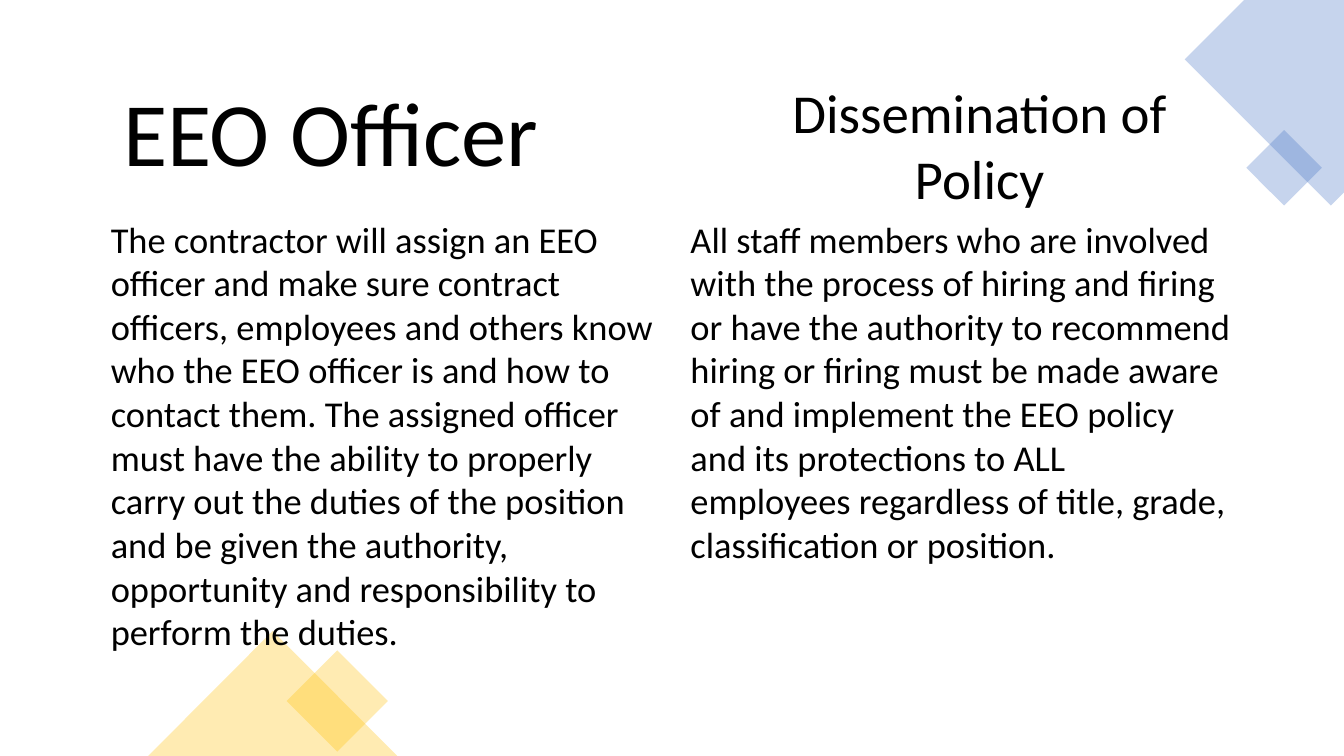
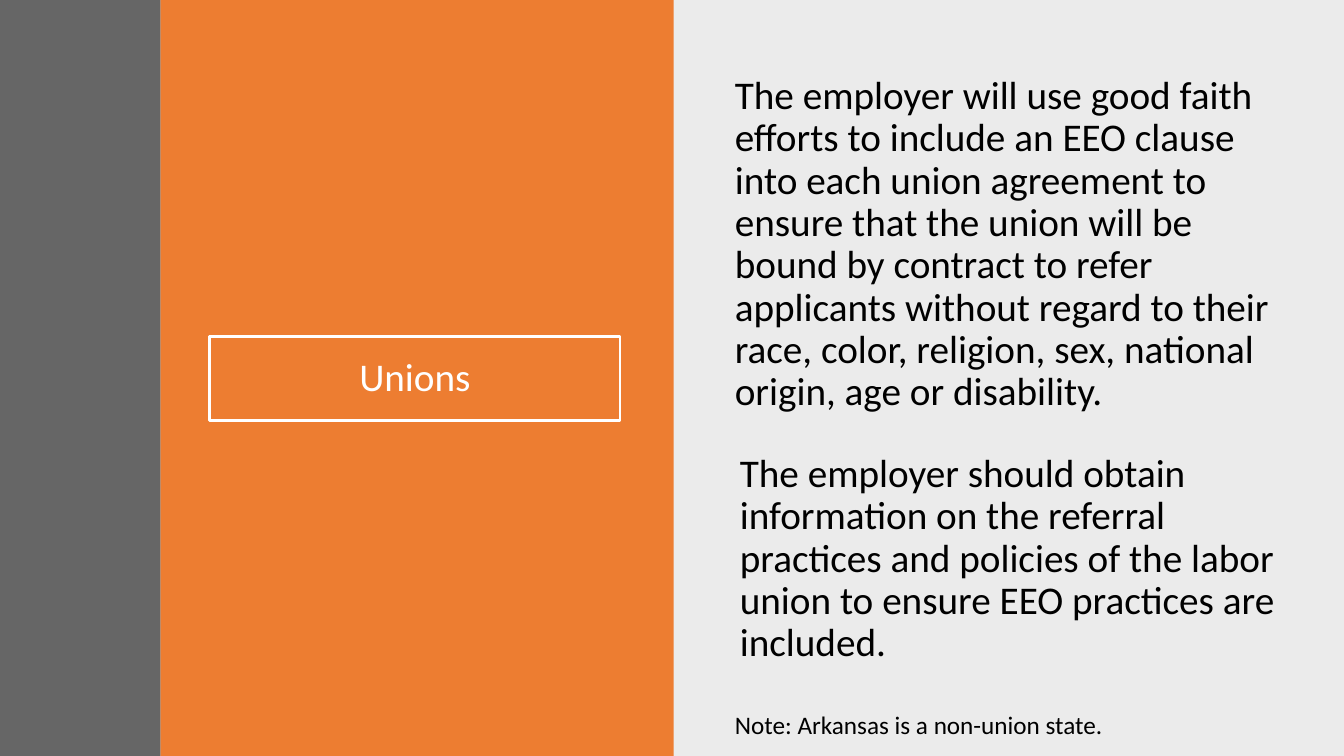
from pptx import Presentation
from pptx.dml.color import RGBColor
from pptx.enum import shapes, text
from pptx.oxml.ns import qn
from pptx.util import Inches, Pt
from lxml import etree

COLORS = {"black": "000000", "white": "FFFFFF", "blue": "4472C4",
          "gold": "FFC000", "orange": "ED7D31", "grey": "404040"}
FONT = "Calibri"
RECT = shapes.MSO_SHAPE.RECTANGLE
TRIANGLE = shapes.MSO_SHAPE.ISOSCELES_TRIANGLE
LEFT, CENTER = text.PP_ALIGN.LEFT, text.PP_ALIGN.CENTER


def paint(sp, color, opacity=100, rotation=0):
    """Give a shape a flat, borderless fill; opacity is in percent."""
    sp.shadow.inherit = False
    sp.rotation = rotation
    sp.line.fill.background()
    sp.fill.solid()
    sp.fill.fore_color.rgb = RGBColor.from_string(COLORS[color])
    if opacity < 100:
        clr = sp.element.spPr.find(qn("a:solidFill"))[0]
        etree.SubElement(clr, qn("a:alpha"), val=str(opacity * 1000))


def write(sp, box, words, size, color="black", anchor=text.MSO_ANCHOR.TOP, **paragraph):
    """Place a text box or title and fill it with one formatted paragraph."""
    sp.left, sp.top, sp.width, sp.height = (Inches(v) for v in box)
    tf = sp.text_frame
    tf.word_wrap = True
    tf.auto_size = text.MSO_AUTO_SIZE.NONE
    tf.vertical_anchor = anchor
    p = tf.paragraphs[0]
    for name, value in paragraph.items():
        setattr(p, name, value)
    r = p.add_run()
    r.text = words
    r.font.name = FONT
    r.font.size = Pt(size)
    r.font.color.rgb = RGBColor.from_string(COLORS[color])


prs = Presentation()
prs.slide_width, prs.slide_height = Inches(13.33), Inches(7.5)
title_only = prs.slide_layouts[5]

# Slide 1: EEO officer and dissemination of policy
s = prs.slides.add_slide(title_only)
outline = [(12.34, 0), (11.75, 0.59), (13.2, 2.04), (13.33, 1.91), (13.33, 0)]
points = [(Inches(x), Inches(y)) for x, y in outline]
builder = s.shapes.build_freeform(*points[0])
builder.add_line_segments(points[1:], close=True)
paint(builder.convert_to_shape(), "blue", 30)

for kind, box, color, rotation in [
    (RECT, (12.47, 1.4, 0.53, 0.53), "blue", 45),
    (RECT, (2.99, 6.6, 0.71, 0.71), "gold", 45),
    (TRIANGLE, (1.47, 6.26, 2.47, 1.24), "gold", 0),
]:
    sp = s.shapes.add_shape(kind, *(Inches(v) for v in box))
    paint(sp, color, 30, rotation)

columns = [
    "The contractor will assign an EEO officer and make sure contract officers, "
    "employees and others know who the EEO officer is and how to contact them. "
    "The assigned officer must have the ability to properly carry out the duties "
    "of the position and be given the authority, opportunity and responsibility "
    "to perform the duties.",
    "All staff members who are involved with the process of hiring and firing or "
    "have the authority to recommend hiring or firing must be made aware of and "
    "implement the EEO policy and its protections to ALL employees regardless of "
    "title, grade, classification or position.",
]
for i, words in enumerate(columns):
    write(s.shapes.add_textbox(0, 0, 0, 0), (1 + 5.75 * i, 2.1, 5.59, 4.69),
          words, 26, space_after=Pt(6))

write(s.shapes.title, (1.12, 0.7, 4.99, 1.2), "EEO Officer", 64.7,
      alignment=LEFT, space_after=Pt(6))
write(s.shapes.add_textbox(0, 0, 0, 0), (7.22, 0.73, 4.99, 1.43),
      "Dissemination of Policy", 39.2, alignment=CENTER, space_after=Pt(6))

# Slide 2: unions
s = prs.slides.add_slide(title_only)
for left, width, color, opacity in [
    (6.67, 6.66, "black", 8),
    (1.59, 5.09, "orange", 100),
    (0, 1.59, "grey", 80),
]:
    sp = s.shapes.add_shape(RECT, Inches(left), 0, Inches(width), prs.slide_height)
    paint(sp, color, opacity)

title = s.shapes.title
s.shapes.element.append(title.element)  # bring the title in front of the bands
write(title, (2.08, 3.34, 4.07, 0.83), "Unions", 28, "white",
      text.MSO_ANCHOR.MIDDLE, alignment=CENTER, line_spacing=0.9)
title.line.color.rgb = RGBColor.from_string(COLORS["white"])
title.line.width = Pt(2)

body = {"line_spacing": 0.9, "space_before": Pt(10)}
for box, words, size, paragraph in [
    ((7.19, 0.7, 5.53, 2.79),
     "The employer will use good faith efforts to include an EEO clause into each "
     "union agreement to ensure that the union will be bound by contract to refer "
     "applicants without regard to their race, color, religion, sex, national "
     "origin, age or disability.", 28, body),
    ((7.24, 4.45, 5.53, 2.79),
     "The employer should obtain information on the referral practices and "
     "policies of the labor union to ensure EEO practices are included.", 28, body),
    ((7.19, 6.99, 5.58, 0.4), "Note: Arkansas is a non-union state.", 18, {}),
]:
    write(s.shapes.add_textbox(0, 0, 0, 0), box, words, size, **paragraph)

prs.save("out.pptx")
